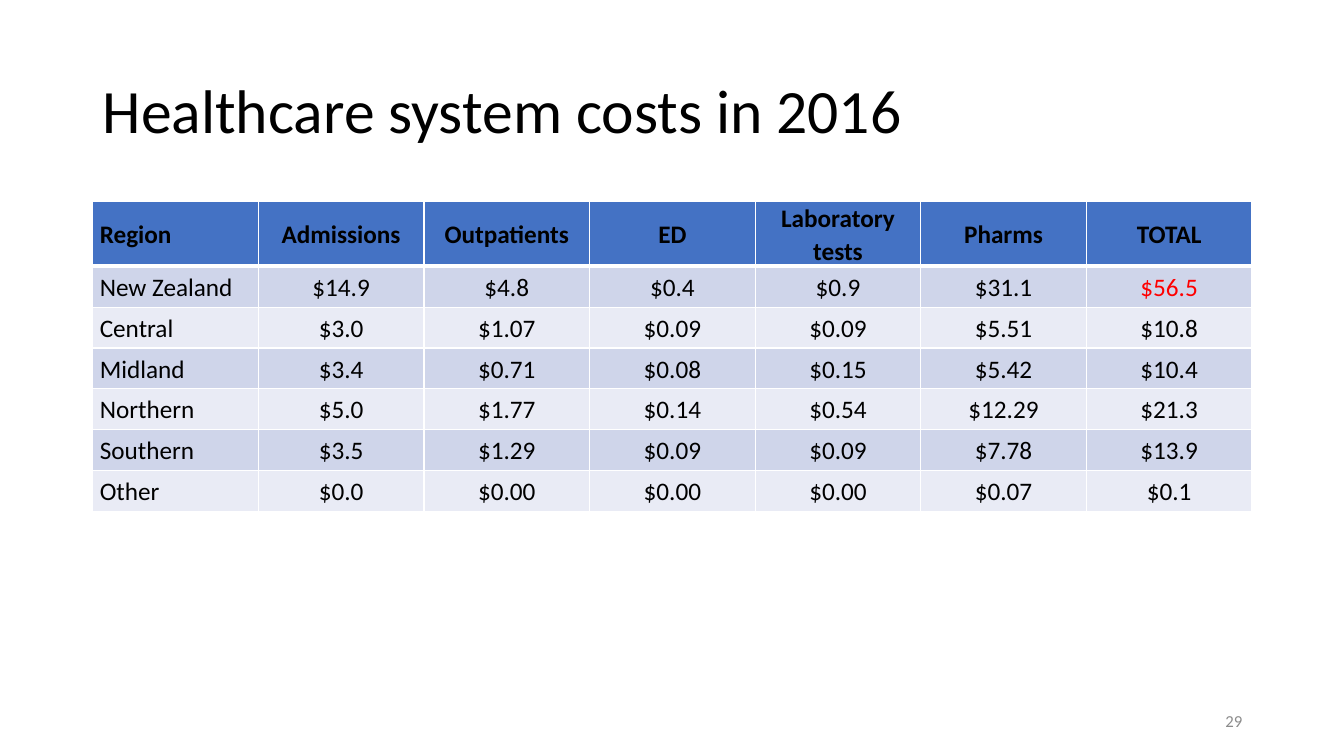
from dataclasses import dataclass

from lxml import etree
from pptx import Presentation
from pptx import util as u
from pptx.dml.color import RGBColor
from pptx.enum import text
from pptx.oxml import ns

FONT = "Calibri"
BLACK, RED, GREY, WHITE = "000000", "FF0000", "8C8C8C", "FFFFFF"
HEADER_FILL = "4472C4"
BAND_FILLS = ("CFD5EA", "E9EBF5")
LEFT, CENTER, RIGHT = text.PP_ALIGN.LEFT, text.PP_ALIGN.CENTER, text.PP_ALIGN.RIGHT

TABLE_LEFT, TABLE_TOP, TABLE_WIDTH = 0.92, 2, 11.5
HEADER_HEIGHT, BODY_HEIGHT = 0.41, 2.43
COSTS = (
    ("Region", "Admissions", "Outpatients", "ED", "Laboratory tests", "Pharms", "TOTAL"),
    ("New Zealand", "$14.9", "$4.8", "$0.4", "$0.9", "$31.1", "$56.5"),
    ("Central", "$3.0", "$1.07", "$0.09", "$0.09", "$5.51", "$10.8"),
    ("Midland", "$3.4", "$0.71", "$0.08", "$0.15", "$5.42", "$10.4"),
    ("Northern", "$5.0", "$1.77", "$0.14", "$0.54", "$12.29", "$21.3"),
    ("Southern", "$3.5", "$1.29", "$0.09", "$0.09", "$7.78", "$13.9"),
    ("Other", "$0.0", "$0.00", "$0.00", "$0.00", "$0.07", "$0.1"),
)
NATIONAL_TOTAL = (1, 6)


@dataclass(frozen=True)
class Label:
    wording: str
    left: float
    top: float
    width: float
    height: float
    size: float
    color: str
    align: text.PP_ALIGN
    line_spacing: float


LABELS = (
    Label("Healthcare system costs in 2016", 0.92, 0.4, 11.5, 1.45, 44, BLACK, LEFT, 0.9),
    Label("29", 9.42, 6.95, 3, 0.4, 12, GREY, RIGHT, 1.0),
)


def rgb(color: str) -> RGBColor:
    return RGBColor.from_string(color)


def style_paragraph(paragraph, size: float, color: str, align: text.PP_ALIGN,
                    line_spacing: float, bold: bool = False) -> None:
    paragraph.alignment = align
    paragraph.line_spacing = line_spacing
    paragraph.font.name = FONT
    paragraph.font.size = u.Pt(size)
    paragraph.font.bold = bold
    paragraph.font.color.rgb = rgb(color)


def add_label(slide, label: Label) -> None:
    shape = slide.shapes.add_textbox(u.Inches(label.left), u.Inches(label.top),
                                     u.Inches(label.width), u.Inches(label.height))
    frame = shape.text_frame
    frame.word_wrap = True
    frame.vertical_anchor = text.MSO_ANCHOR.MIDDLE
    frame.text = label.wording
    style_paragraph(frame.paragraphs[0], label.size, label.color, label.align,
                    label.line_spacing)


def set_borders(cell, top: float, bottom: float) -> None:
    properties = cell._tc.get_or_add_tcPr()
    widths = {"a:lnL": 1, "a:lnR": 1, "a:lnT": top, "a:lnB": bottom}
    # Border lines must come before the fill
    for position, (tag, width) in enumerate(widths.items()):
        line = etree.Element(ns.qn(tag), w=str(u.Pt(width)))
        fill = etree.SubElement(line, ns.qn("a:solidFill"))
        etree.SubElement(fill, ns.qn("a:srgbClr"), val=WHITE)
        properties.insert(position, line)


def fill_cell(cell, wording: str, row: int, column: int) -> None:
    is_header = row == 0
    cell.text = wording
    cell.vertical_anchor = text.MSO_ANCHOR.MIDDLE
    cell.margin_left = cell.margin_right = u.Inches(0.07)
    cell.margin_top = cell.margin_bottom = 0
    cell.fill.solid()
    cell.fill.fore_color.rgb = rgb(HEADER_FILL if is_header else BAND_FILLS[(row - 1) % 2])
    paragraph = cell.text_frame.paragraphs[0]
    paragraph.space_before = paragraph.space_after = u.Pt(2)
    style_paragraph(paragraph, 18, RED if (row, column) == NATIONAL_TOTAL else BLACK,
                    LEFT if column == 0 else CENTER, 1.07, is_header)
    set_borders(cell, top=3 if row == 1 else 1, bottom=3 if is_header else 1)


def add_cost_table(slide) -> None:
    row_count, column_count = len(COSTS), len(COSTS[0])
    table = slide.shapes.add_table(
        row_count, column_count, u.Inches(TABLE_LEFT), u.Inches(TABLE_TOP),
        u.Inches(TABLE_WIDTH), u.Inches(HEADER_HEIGHT + BODY_HEIGHT)).table
    table.horz_banding = False
    for column in table.columns:
        column.width = u.Inches(TABLE_WIDTH / column_count)
    for row, values in enumerate(COSTS):
        height = BODY_HEIGHT / (row_count - 1) if row else HEADER_HEIGHT
        table.rows[row].height = u.Inches(height)
        for column, wording in enumerate(values):
            fill_cell(table.cell(row, column), wording, row, column)


def main() -> None:
    presentation = Presentation()
    presentation.slide_width = u.Inches(13.33)
    presentation.slide_height = u.Inches(7.5)
    slide = presentation.slides.add_slide(presentation.slide_layouts[6])

    # Title and page number
    for label in LABELS:
        add_label(slide, label)

    # Regional costs
    add_cost_table(slide)
    presentation.save("out.pptx")


if __name__ == "__main__":
    main()
